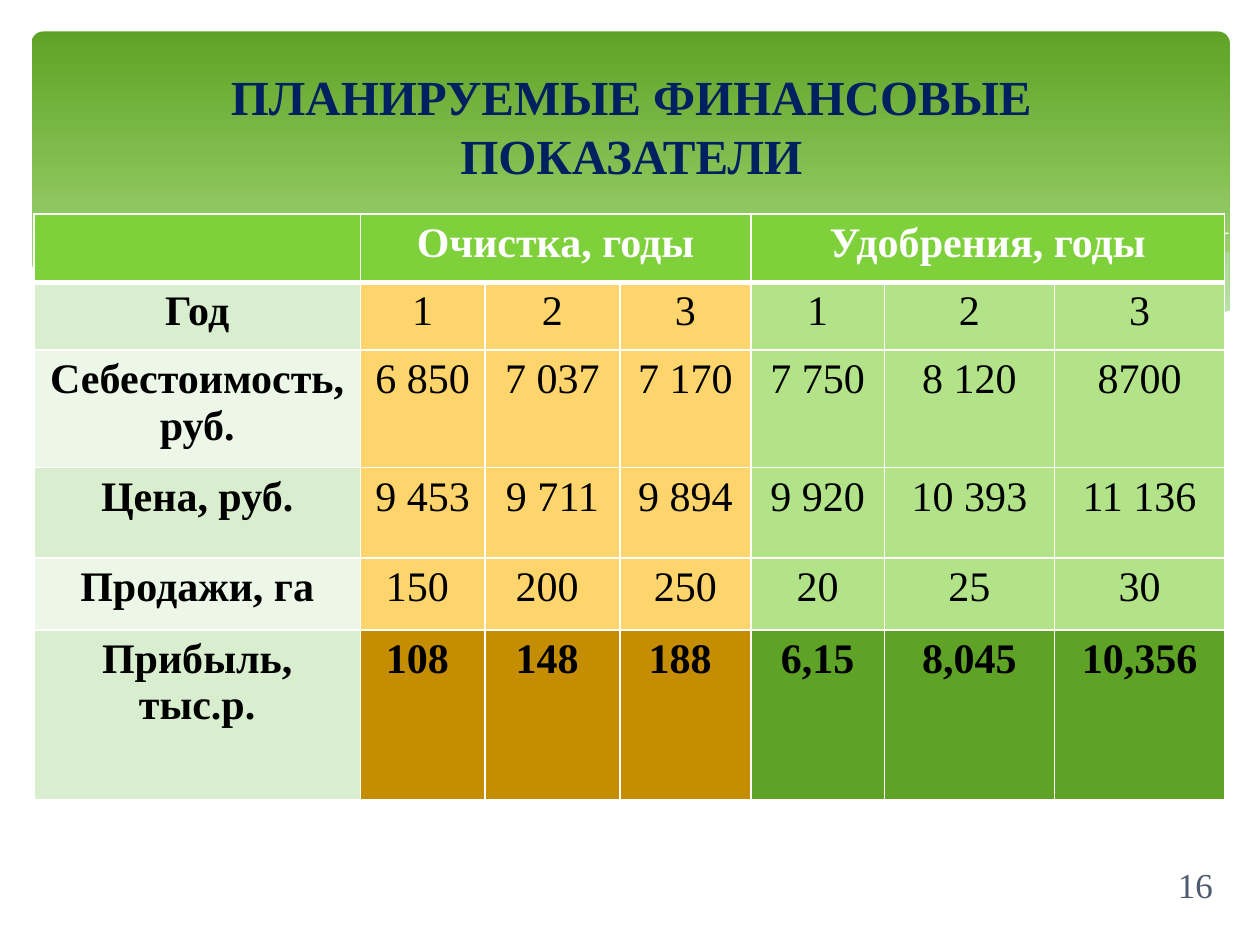
from lxml.etree import SubElement
from pptx import Presentation
from pptx.dml.color import RGBColor
from pptx.enum.shapes import MSO_SHAPE as Shape
from pptx.enum.text import MSO_ANCHOR as Anchor, PP_ALIGN as Align
from pptx.oxml.ns import qn
from pptx.util import Inches, Pt

COLORS = {
    "white": "FFFFFF", "black": "000000", "navy": "002060", "slate": "4E5B6F",
    "sky": "D6ECFF", "header": "7FD13B", "mint": "D8EECE", "pale": "ECF7E8",
    "amber": "FED46C", "ochre": "C58D01", "lime": "B2E389", "green": "5FA326",
}


def rgb(name):
    return RGBColor.from_string(COLORS[name])


def write(frame, text, size=24, color="black", bold=False, align=Align.CENTER,
          font="Times New Roman"):
    paragraph = frame.paragraphs[0]
    paragraph.alignment = align
    run = paragraph.add_run()
    run.text = text
    run.font.name = font
    run.font.size = Pt(size)
    run.font.bold = bold
    run.font.color.rgb = rgb(color)


class SlideBuilder:
    def __init__(self, slide):
        self.slide = slide
        self.shapes = slide.shapes

    def banner(self, left, top, width, height, colors):
        shape = self.shapes.add_shape(
            Shape.ROUNDED_RECTANGLE, Inches(left), Inches(top), Inches(width), Inches(height))
        shape.adjustments[0] = 0.034
        shape.shadow.inherit = False
        shape.line.fill.background()
        shape.fill.gradient()
        shape.fill.gradient_angle = 270
        for stop, color, position in zip(shape.fill.gradient_stops, colors, (0, 0.9)):
            stop.color.rgb = rgb(color)
            stop.position = position

    def wave(self, points, fill=None, alpha=None, line=None):
        start, *rest = [(Inches(x), Inches(y)) for x, y in points]
        builder = self.shapes.build_freeform(*start)
        builder.add_line_segments(rest, close=fill is not None)
        shape = builder.convert_to_shape()
        shape.shadow.inherit = False
        if fill:
            shape.fill.solid()
            shape.fill.fore_color.rgb = rgb(fill)
        else:
            shape.fill.background()
        if alpha:
            color = shape.fill._xPr.find(qn("a:solidFill"))[0]
            SubElement(color, qn("a:alpha"), val=str(alpha * 1000))
        if line:
            shape.line.color.rgb = rgb(line)
            shape.line.width = Pt(0)
        else:
            shape.line.fill.background()

    def text(self, text, left, top, width, height, **style):
        box = self.shapes.add_textbox(Inches(left), Inches(top), Inches(width), Inches(height))
        box.text_frame.word_wrap = True
        box.text_frame.vertical_anchor = Anchor.MIDDLE
        write(box.text_frame, text, **style)

    def cell(self, cell, text, fill, bottom=1, **style):
        properties = cell._tc.get_or_add_tcPr()
        for side, width in (("L", 1), ("R", 1), ("T", 1), ("B", bottom)):
            border = SubElement(properties, qn(f"a:ln{side}"), w=str(Pt(width)))
            color = SubElement(border, qn("a:solidFill"))
            SubElement(color, qn("a:srgbClr"), val=COLORS["white"])
        cell.fill.solid()
        cell.fill.fore_color.rgb = rgb(fill)
        if text:
            write(cell.text_frame, text, **style)

    def table(self, left, top, widths, heights):
        table = self.shapes.add_table(
            len(heights), len(widths), Inches(left), Inches(top),
            Inches(sum(widths)), Inches(sum(heights))).table
        for column, width in zip(table.columns, widths):
            column.width = Inches(width)
        for row, height in zip(table.rows, heights):
            row.height = Inches(height)
        return table


# Wave outlines in inches
RIGHT_WAVE = [
    (9.76, 2), (9.35, 2.07), (8.91, 2.16), (8.05, 2.37), (7.53, 2.48), (6.61, 2.65),
    (7.05, 2.71), (7.57, 2.76), (8.03, 2.78), (8.54, 2.76), (8.97, 2.7), (9.35, 2.62),
    (9.76, 2.47)]
MIDDLE_WAVE = [
    (8.93, 2.73), (8.07, 2.6), (7.41, 2.48), (6.29, 2.22), (5.69, 2.08), (5.14, 1.98),
    (4.64, 1.91), (4.2, 1.87), (3.8, 1.86), (3.28, 1.87), (2.86, 1.91), (3.42, 1.99),
    (4.04, 2.11), (4.91, 2.32), (5.66, 2.48), (6.34, 2.61), (6.95, 2.7), (7.48, 2.76),
    (8.07, 2.79), (8.57, 2.77)]
LONG_CURVE = [
    (3.09, 1.95), (3.43, 1.9), (4.01, 1.87), (4.69, 1.89), (5.32, 1.94), (6.08, 2.04),
    (6.95, 2.19), (7.95, 2.42), (9.07, 2.72)]
SHORT_CURVE = [
    (6.13, 2.57), (6.72, 2.41), (7.48, 2.23), (8.36, 2.04), (8.95, 1.94), (9.37, 1.88),
    (9.75, 1.85)]
WHITE_WAVE = [
    (9.77, 2.46), (9.4, 2.59), (8.99, 2.69), (8.5, 2.75), (8.09, 2.77), (7.44, 2.74),
    (6.88, 2.68), (6.26, 2.58), (5.55, 2.45), (4.75, 2.27), (3.91, 2.07), (3.39, 1.97),
    (2.71, 1.88), (2.11, 1.84), (1.61, 1.84), (1.06, 1.89), (0.67, 1.97), (0.36, 2.07),
    (0.23, 2.13), (0.23, 3.29), (9.77, 3.29)]

COLUMN_WIDTHS = [2.59, 0.99, 1.07, 1.04, 1.06, 1.35, 1.35]
ROW_HEIGHTS = [0.54, 0.54, 0.93, 0.72, 0.57, 1.35]
GROUPS = {1: "Очистка, годы", 4: "Удобрения, годы"}
ROWS = [
    ["Год", "1", "2", "3", "1", "2", "3"],
    ["Себестоимость, руб.", "6 850", "7 037", "7 170", "7 750", "8 120", "8700"],
    ["Цена, руб.", "9 453", "9 711", "9 894", "9 920", "10 393", "11 136"],
    ["Продажи, га", "150 ", "200 ", "250", "20", "25", "30"],
    ["Прибыль, тыс.р.", "108 ", "148 ", "188 ", "6,15", "8,045", "10,356"],
]


def main():
    presentation = Presentation()
    presentation.slide_width, presentation.slide_height = Inches(10), Inches(7.5)
    builder = SlideBuilder(presentation.slides.add_slide(presentation.slide_layouts[6]))

    # Green banner with waves along its lower edge
    builder.banner(0.25, 0.25, 9.51, 2.7, ("green", "lime"))
    builder.wave(RIGHT_WAVE, fill="sky", alpha=29)
    builder.wave(MIDDLE_WAVE, fill="sky", alpha=40)
    builder.wave(LONG_CURVE, line="white")
    builder.wave(SHORT_CURVE, line="white")
    builder.wave(WHITE_WAVE, fill="white")

    # Title and slide number
    builder.text("ПЛАНИРУЕМЫЕ ФИНАНСОВЫЕ ПОКАЗАТЕЛИ", 0.51, 0.52, 9, 0.95,
                 size=28, color="navy", bold=True)
    builder.text("16", 9.25, 6.9, 0.53, 0.24, size=20, color="slate", align=Align.LEFT)

    # Table header: one merged cell for each group of three years
    table = builder.table(0.27, 1.7, COLUMN_WIDTHS, ROW_HEIGHTS)
    for first in GROUPS:
        table.cell(0, first).merge(table.cell(0, first + 2))
    for column in range(len(COLUMN_WIDTHS)):
        builder.cell(table.cell(0, column), GROUPS.get(column), "header", bottom=3,
                     color="white", bold=True)

    # Table body: labels are banded, the profit row is darker
    for row, values in enumerate(ROWS, start=1):
        profit = row == len(ROWS)
        label_fill = "mint" if row % 2 else "pale"
        cleaning, fertilizer = ("ochre", "green") if profit else ("amber", "lime")
        fills = [label_fill] + [cleaning] * 3 + [fertilizer] * 3
        for column, (value, fill) in enumerate(zip(values, fills)):
            builder.cell(table.cell(row, column), value, fill, bold=profit or column == 0)

    presentation.save("out.pptx")


if __name__ == "__main__":
    main()
